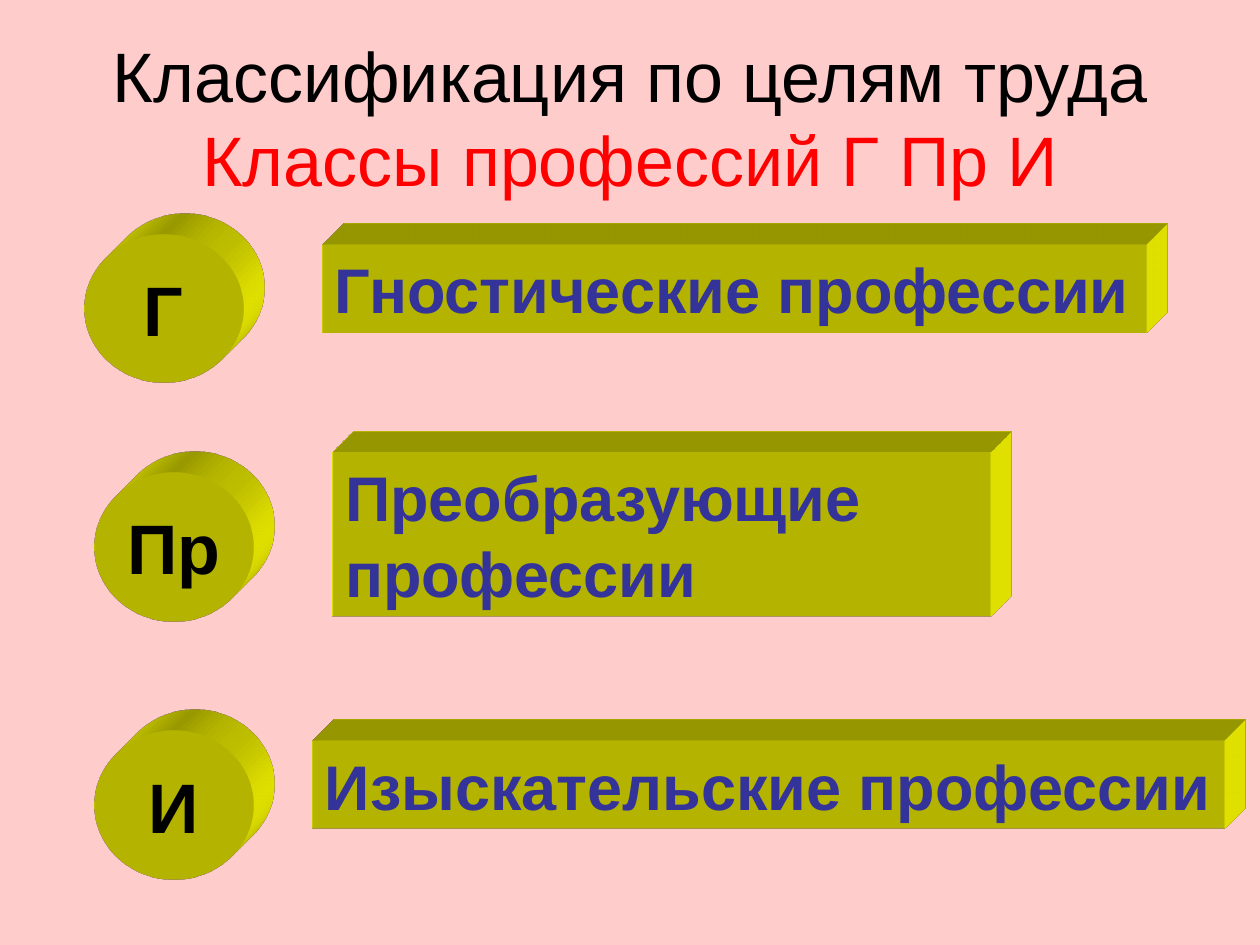
from lxml import etree
from pptx import Presentation
from pptx.dml.color import RGBColor
from pptx.enum.shapes import MSO_SHAPE
from pptx.enum.text import MSO_ANCHOR, MSO_AUTO_SIZE, PP_ALIGN
from pptx.util import Inches, Pt

RECT, OVAL = MSO_SHAPE.RECTANGLE, MSO_SHAPE.OVAL
LEFT, CENTER = PP_ALIGN.LEFT, PP_ALIGN.CENTER
TOP, MIDDLE = MSO_ANCHOR.TOP, MSO_ANCHOR.MIDDLE
NS = "http://schemas.openxmlformats.org/drawingml/2006/main"

# Content: boxes are left, top, width, height in inches
TITLE = ("Классификация по целям труда", "Классы профессий Г Пр И")
BARS = [
    ("Гностические профессии", (2.56, 1.94, 6.54, 0.7), False),
    ("Преобразующие профессии", (2.64, 3.59, 5.22, 1.3), True),
    ("Изыскательские профессии", (2.48, 5.88, 7.24, 0.7), False),
]
DISC = (1.26, 1.18)
DISCS = [("Г", 0.67, 1.86), ("Пр", 0.75, 3.75), ("И", 0.75, 5.8)]

THEME = {
    "font": "Arial", "back": "FFCCCC", "fill": "FFFF00", "ink": "000000",
    "accent": "FF0000", "bar": "333399", "big": 40, "mid": 36,
}

# Oblique block depth, lit from the side
DEPTH = (
    f'<a:scene3d xmlns:a="{NS}"><a:camera prst="legacyObliqueTopRight"/>'
    '<a:lightRig rig="legacyFlat3" dir="b"/></a:scene3d>',
    f'<a:sp3d xmlns:a="{NS}" extrusionH="430200" prstMaterial="legacyMatte">'
    '<a:bevelT w="13500" h="13500" prst="angle"/>'
    '<a:bevelB w="13500" h="13500" prst="angle"/>'
    f'<a:extrusionClr><a:srgbClr val="{THEME["fill"]}"/></a:extrusionClr></a:sp3d>',
)


def color(name):
    return RGBColor.from_string(THEME[name])


def style(run, size, ink, bold=False):
    font = run.font
    font.name, font.size, font.bold = THEME["font"], Pt(THEME[size]), bold
    font.color.rgb = color(ink)


def add_block(slide, kind, box, text, size, ink, align, anchor, wrap=False):
    shape = slide.shapes.add_shape(kind, *map(Inches, box))
    shape.shadow.inherit = False
    shape.fill.solid()
    shape.fill.fore_color.rgb = color("fill")
    shape.line.fill.background()
    for xml in DEPTH:
        shape._element.spPr.append(etree.fromstring(xml))
    frame = shape.text_frame
    frame.text = text
    frame.word_wrap, frame.vertical_anchor = wrap, anchor
    para = frame.paragraphs[0]
    para.alignment = align
    style(para.runs[0], size, ink, True)
    return frame


def main():
    deck = Presentation()
    deck.slide_width, deck.slide_height = Inches(10), Inches(7.5)
    slide = deck.slides.add_slide(deck.slide_layouts[6])
    slide.background.fill.solid()
    slide.background.fill.fore_color.rgb = color("back")

    # Title
    title = slide.shapes.add_textbox(*map(Inches, (0, 0.3, 10, 1.25))).text_frame
    title.word_wrap, title.vertical_anchor = True, MIDDLE
    para = title.paragraphs[0]
    para.text = "\v".join(TITLE)
    para.alignment = CENTER
    for run, ink in zip(para.runs, ("ink", "accent")):
        style(run, "big", ink)

    # Class names
    for text, box, wrap in BARS:
        frame = add_block(slide, RECT, box, text, "mid", "bar", LEFT, TOP, wrap)
        frame.auto_size = MSO_AUTO_SIZE.SHAPE_TO_FIT_TEXT

    # Class letters
    for text, left, top in DISCS:
        add_block(slide, OVAL, (left, top, *DISC), text, "big", "ink", CENTER, MIDDLE)

    deck.save("out.pptx")


if __name__ == "__main__":
    main()
